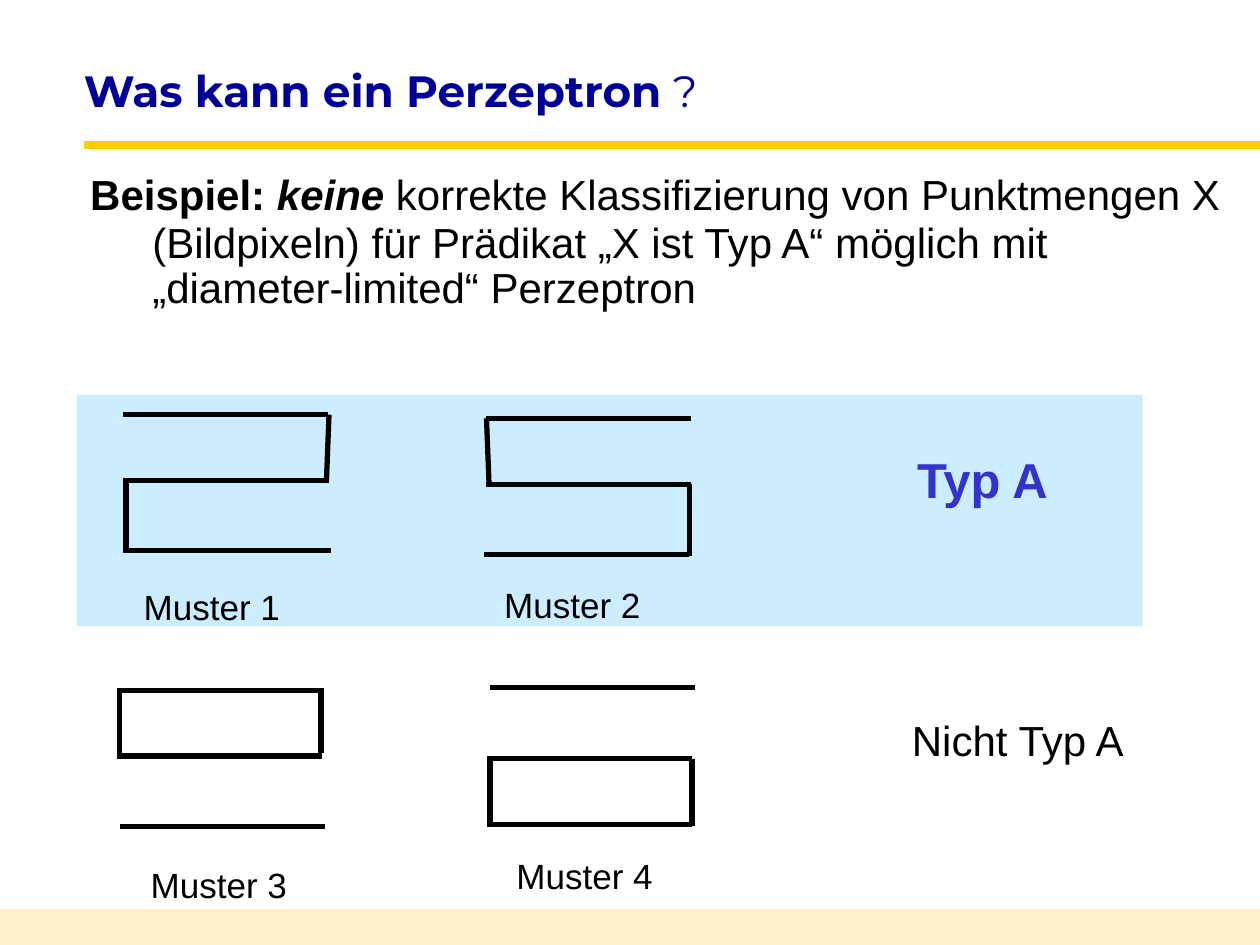
from dataclasses import dataclass

from lxml import etree
from pptx import Presentation
from pptx.dml.color import RGBColor
from pptx.enum.shapes import MSO_CONNECTOR, MSO_SHAPE
from pptx.enum.text import MSO_ANCHOR
from pptx.oxml.ns import qn
from pptx.util import Pt

LINE = MSO_CONNECTOR.STRAIGHT
RECT = MSO_SHAPE.RECTANGLE
TOP = MSO_ANCHOR.TOP
MIDDLE = MSO_ANCHOR.MIDDLE


@dataclass(frozen=True)
class Theme:
    """Hold the colours, fonts and type sizes of the slide."""
    black: str = "000000"
    navy: str = "000099"
    violet: str = "3333CC"
    gold: str = "FFCC00"
    cream: str = "FFE499"
    sky: str = "CCECFF"
    head: str = "Montserrat"
    sans: str = "Arial"
    title: float = 25
    large: float = 28
    body: float = 24
    label: float = 20
    rule: float = 4.5
    stroke: float = 3


THEME = Theme()
BAR = 117
PATTERNS = [
    ([(70.5, 237), (70.5, 274.5), (72, 314.5)],
     [(188, 237, 186.5, 276), (72, 274.5, 72, 316)]),
    ([(278, 239), (278, 277), (276.5, 317)],
     [(278, 239, 279.5, 278), (394, 276.5, 394, 318)]),
    ([(67, 394.5), (67, 432), (68.5, 472.5)],
     [(68.5, 393, 68.5, 430.5), (183.5, 393, 183.5, 430.5)]),
    ([(280, 393), (278.5, 433.5), (278.5, 471)],
     [(280, 434, 280, 472), (395.5, 434, 395.5, 472)]),
]
LABELS = [
    ("Muster 1", (75, 331, 118, 32)),
    ("Muster 2", (281, 330, 118, 32)),
    ("Muster 3", (79, 490, 93, 32)),
    ("Muster 4", (288, 485, 106, 32)),
]


def style(item, values):
    """Set each named value on the item."""
    for name, value in values.items():
        setattr(item, name, value)


def add_block(slide, box, tint, alpha=100):
    """Add a plain filled rectangle."""
    block = slide.shapes.add_shape(RECT, *map(Pt, box))
    block.shadow.inherit = False
    block.line.fill.background()
    block.fill.solid()
    block.fill.fore_color.rgb = RGBColor.from_string(tint)
    if alpha < 100:
        color = block.fill._xPr.find(".//" + qn("a:srgbClr"))
        etree.SubElement(color, qn("a:alpha"), val=str(alpha * 1000))


def add_line(slide, ends, tint=THEME.black, width=THEME.stroke):
    """Add a straight line between two points."""
    line = slide.shapes.add_connector(LINE, *map(Pt, ends))
    line.line.color.rgb = RGBColor.from_string(tint)
    line.line.width = Pt(width)
    etree.SubElement(line._element.spPr, qn("a:effectLst"))


def add_text(slide, box, runs, tint=THEME.black, face=THEME.sans, **frame):
    """Add a text box of (words, size, format) runs and return its paragraph."""
    text = slide.shapes.add_textbox(*map(Pt, box)).text_frame
    style(text, {"word_wrap": True, "vertical_anchor": TOP, **frame})
    para = text.paragraphs[0]
    for words, size, form in runs:
        run = para.add_run()
        run.text = words
        style(run.font, {"name": face, "size": Pt(size), **form})
        run.font.color.rgb = RGBColor.from_string(tint)
    return para


def add_pattern(slide, bars, sides):
    """Draw level bars of equal length and the sides that join them."""
    for left, top in bars:
        add_line(slide, (left, top, left + BAR, top))
    for ends in sides:
        add_line(slide, ends)


def add_body(slide):
    """Add the example text with its hanging indent."""
    bold = {"bold": True}
    runs = [
        ("Beispiel: ", THEME.body, bold),
        ("keine", THEME.body, {"bold": True, "italic": True}),
        (" korrekte Klassifizierung von Punktmengen X (Bildpixeln) "
         "für Prädikat „X ist Typ A“ möglich mit", THEME.body, {}),
        (" ", THEME.large, bold),
        ("„diameter-limited“ Perzeptron", THEME.body, {}),
    ]
    para = add_text(slide, (44.5, 97, 675.5, 101.5), runs)
    para.line_spacing = 0.85
    props = para._p.get_or_add_pPr()
    props.set("marL", str(Pt(35.5)))
    props.set("indent", str(-Pt(35.5)))


def main():
    """Build the slide and save it."""
    deck = Presentation()
    style(deck, {"slide_width": Pt(720), "slide_height": Pt(540)})
    slide = deck.slides.add_slide(deck.slide_layouts[6])
    add_block(slide, (0, 519.5, 720, 20.5), THEME.cream, 50)
    add_line(slide, (48, 83, 720, 83), THEME.gold, THEME.rule)
    add_block(slide, (44, 225.5, 609, 132.5), THEME.sky)
    title = [("Was kann ein Perzeptron", THEME.title, {"bold": True}),
             (" ?", THEME.title, {})]
    add_text(slide, (48, 31.5, 521, 39.5), title, THEME.navy, THEME.head,
             margin_left=0, word_wrap=False, vertical_anchor=MIDDLE)
    add_body(slide)
    for bars, sides in PATTERNS:
        add_pattern(slide, bars, sides)
    add_text(slide, (517, 253.5, 105, 41),
             [("Typ A", THEME.large, {"bold": True})], THEME.violet)
    add_text(slide, (514, 404.5, 147.5, 36), [("Nicht Typ A", THEME.body, {})])
    for words, box in LABELS:
        add_text(slide, box, [(words, THEME.label, {})])
    deck.save("out.pptx")


if __name__ == "__main__":
    main()
